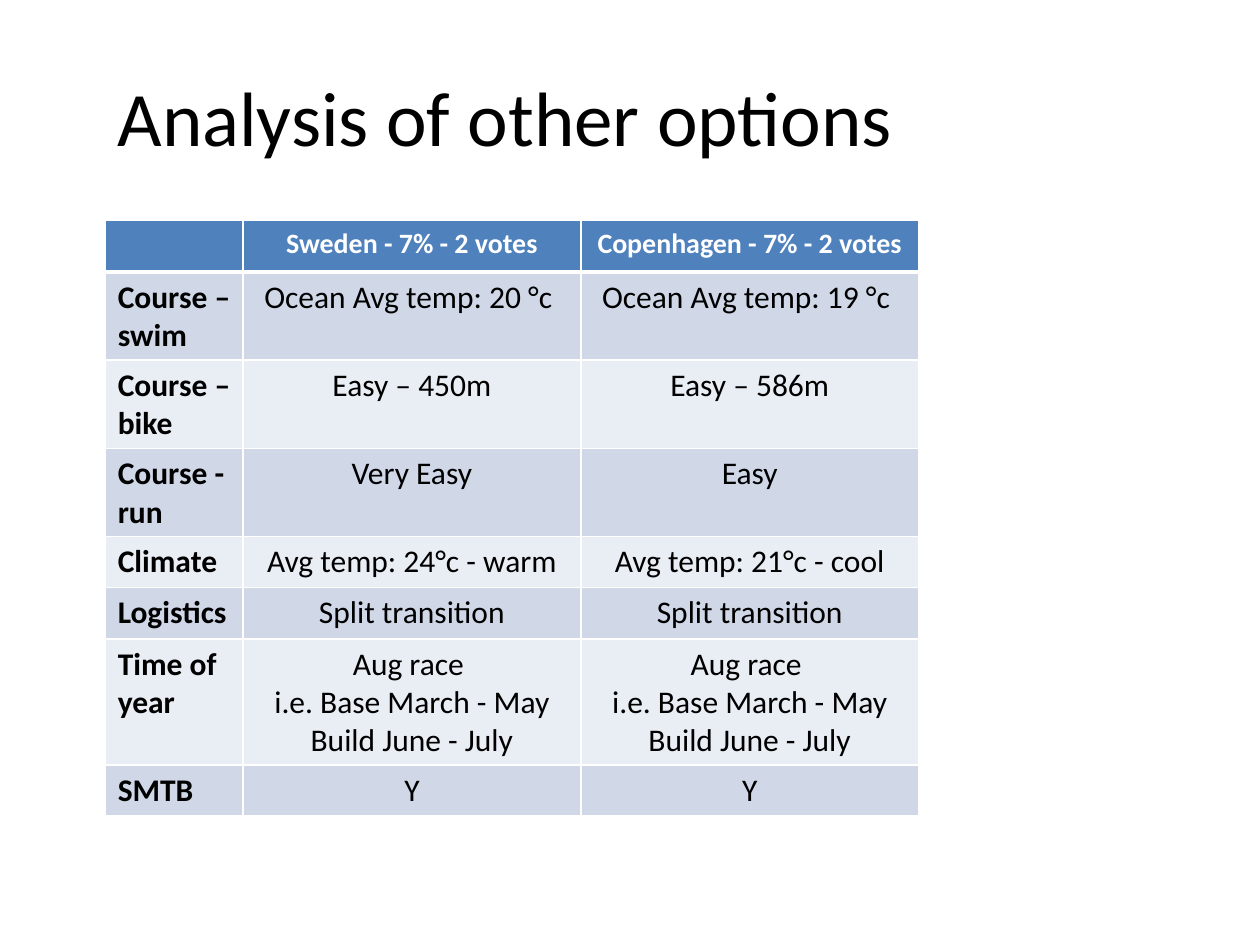
from lxml.etree import SubElement
from pptx import Presentation
from pptx.dml.color import RGBColor
from pptx.enum.text import MSO_ANCHOR, PP_ALIGN
from pptx.oxml.ns import qn
from pptx.util import Cm, Pt

FONT = "Calibri"
BLACK, WHITE = "000000", "FFFFFF"
HEADER_FILL = "4F81BD"
BAND_FILLS = ("D0D8E8", "E9EDF4")
COLUMN_WIDTHS = (2.78, 6.81, 6.81)
ROW_HEIGHT = 1.03
SEASON = "Aug race \ni.e. Base March - May\nBuild June - July"
OPTIONS = [
    ("", "Sweden - 7% - 2 votes", "Copenhagen - 7% - 2 votes"),
    ("Course – swim", "Ocean Avg temp: 20 °c ", "Ocean Avg temp: 19 °c "),
    ("Course – bike", "Easy – 450m", "Easy – 586m"),
    ("Course - run", "Very Easy", "Easy"),
    ("Climate", "Avg temp: 24°c - warm", "Avg temp: 21°c - cool"),
    ("Logistics", "Split transition", "Split transition"),
    ("Time of year", SEASON, SEASON),
    ("SMTB", "Y", "Y"),
]


def color(value):
    """Turn a hex string into a colour."""
    return RGBColor.from_string(value)


def write(frame, text, size, ink, bold=False, align=PP_ALIGN.LEFT):
    """Fill a text frame with evenly styled paragraphs."""
    frame.text = text
    for paragraph in frame.paragraphs:
        paragraph.alignment = align
        font = paragraph.font
        font.name, font.size, font.bold = FONT, Pt(size), bold
        font.color.rgb = color(ink)


def add_title(slide, text):
    """Add the slide title."""
    title = slide.shapes.add_textbox(Cm(2.12), Cm(0.74), Cm(22.43), Cm(3.18))
    title.text_frame.word_wrap = True
    title.text_frame.vertical_anchor = MSO_ANCHOR.MIDDLE
    write(title.text_frame, text, 44, BLACK)


def add_borders(cell, top, bottom):
    """Draw white cell borders, with top and bottom widths in points."""
    properties = cell._tc.get_or_add_tcPr()
    for side, width in (("L", 1), ("R", 1), ("T", top), ("B", bottom)):
        line = SubElement(properties, qn(f"a:ln{side}"), w=str(Pt(width)))
        fill = SubElement(line, qn("a:solidFill"))
        SubElement(fill, qn("a:srgbClr"), val=WHITE)


def add_options_table(slide):
    """Add the comparison table of the race options."""
    table = slide.shapes.add_table(
        len(OPTIONS), len(COLUMN_WIDTHS), Cm(2.12), Cm(4.45),
        Cm(sum(COLUMN_WIDTHS)), Cm(ROW_HEIGHT * len(OPTIONS))).table
    for column, width in zip(table.columns, COLUMN_WIDTHS):
        column.width = Cm(width)
    for r, entries in enumerate(OPTIONS):
        table.rows[r].height = Cm(ROW_HEIGHT)
        header = r == 0
        for c, entry in enumerate(entries):
            cell = table.cell(r, c)
            add_borders(cell, 3 if r == 1 else 1, 3 if header else 1)
            cell.fill.solid()
            cell.fill.fore_color.rgb = color(
                HEADER_FILL if header else BAND_FILLS[(r - 1) % 2])
            write(cell.text_frame, entry, 16 if header else 18,
                  WHITE if header else BLACK, header or c == 0,
                  PP_ALIGN.CENTER if c else PP_ALIGN.LEFT)


def main():
    """Build and save the slide."""
    deck = Presentation()
    deck.slide_width, deck.slide_height = Cm(25.4), Cm(19.05)
    slide = deck.slides.add_slide(deck.slide_layouts[6])
    add_title(slide, "Analysis of other options")
    add_options_table(slide)
    deck.save("out.pptx")


if __name__ == "__main__":
    main()
